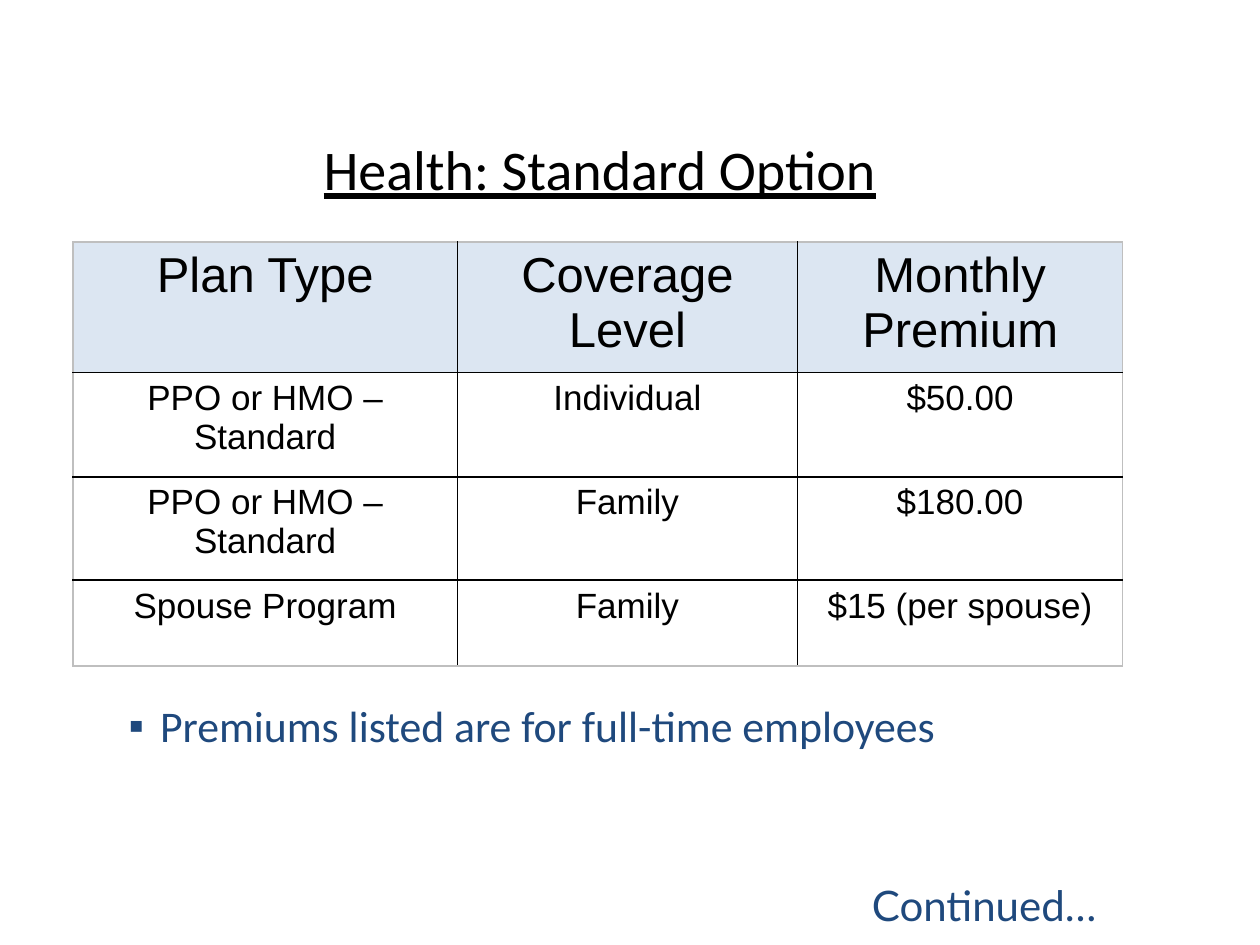
from dataclasses import dataclass

from lxml.etree import SubElement
from pptx import Presentation
from pptx.dml.color import RGBColor
from pptx.enum.text import MSO_ANCHOR, MSO_AUTO_SIZE, PP_ALIGN
from pptx.oxml.ns import qn
from pptx.util import Inches, Pt


@dataclass(frozen=True)
class Theme:
    ink: str = "000000"
    accent: str = "1F497D"
    header_fill: str = "DCE6F2"
    frame: str = "BFBFBF"
    title_size: int = 32
    header_size: int = 28
    cell_size: int = 20
    note_size: int = 25
    continued_size: int = 24


theme = Theme()


def style(paragraph, face, size, color, align):
    paragraph.font.name = face
    paragraph.font.size = Pt(size)
    paragraph.font.color.rgb = RGBColor.from_string(color)
    paragraph.alignment = align
    paragraph.space_before = Pt(0)


def add_border(cell, side, color, points):
    """Draw one side of a cell; call in the order L, R, T, B, before the fill."""
    line = SubElement(cell._tc.get_or_add_tcPr(), qn(f"a:ln{side}"), w=str(Pt(points)))
    fill = SubElement(line, qn("a:solidFill"))
    SubElement(fill, qn("a:srgbClr"), val=color)


deck = Presentation()
deck.slide_width, deck.slide_height = Inches(10), Inches(7.5)
page = deck.slides.add_slide(deck.slide_layouts[1])

# Title
title = page.shapes.title
title.left, title.top = Inches(0.3), Inches(0.92)
title.width, title.height = Inches(8.92), Inches(0.83)
title.text_frame.text = "Health: Standard Option"
title.text_frame.vertical_anchor = MSO_ANCHOR.MIDDLE
heading = title.text_frame.paragraphs[0]
style(heading, "Calibri", theme.title_size, theme.ink, PP_ALIGN.CENTER)
heading.font.underline = True

# Premium table
premiums = [
    ["Plan Type", "Coverage Level", "Monthly Premium"],
    ["PPO or HMO – Standard", "Individual", "$50.00"],
    ["PPO or HMO – Standard", "Family", "$180.00"],
    ["Spouse Program", "Family", "$15 (per spouse)"],
]
column_widths = [3.05, 2.7, 2.58]
row_heights = [0.97, 0.83, 0.82, 0.68]
table = page.shapes.add_table(
    len(row_heights), len(column_widths), Inches(0.58), Inches(1.92),
    Inches(sum(column_widths)), Inches(sum(row_heights))).table
table.first_row = table.horz_banding = False
for column, width in zip(table.columns, column_widths):
    column.width = Inches(width)
for row, height in zip(table.rows, row_heights):
    row.height = Inches(height)

last_row, last_column = len(row_heights) - 1, len(column_widths) - 1
for r, labels in enumerate(premiums):
    for c, label in enumerate(labels):
        cell = table.cell(r, c)
        cell.text = label
        size = theme.cell_size if r else theme.header_size
        style(cell.text_frame.paragraphs[0], "Arial", size, theme.ink, PP_ALIGN.CENTER)
        outer_sides = {"L": c == 0, "R": c == last_column, "T": r == 0, "B": r == last_row}
        for side, is_outer in outer_sides.items():
            add_border(cell, side, theme.frame if is_outer else theme.ink, 1)
        if r == 0:
            cell.fill.solid()
            cell.fill.fore_color.rgb = RGBColor.from_string(theme.header_fill)
        else:
            cell.fill.background()

# Note under the table
note = page.placeholders[1]
note.left, note.top = Inches(0.92), Inches(5.58)
note.width, note.height = Inches(8.33), Inches(0.45)
note.text_frame.text = "Premiums listed are for full-time employees"
note.text_frame.auto_size = MSO_AUTO_SIZE.SHAPE_TO_FIT_TEXT
para = note.text_frame.paragraphs[0]
properties = para._p.get_or_add_pPr()
properties.set("marL", str(Inches(0.25)))
properties.set("indent", str(Inches(-0.25)))
SubElement(properties, qn("a:buFont"), typeface="Arial")
SubElement(properties, qn("a:buChar"), char="▪")
style(para, "Calibri", theme.note_size, theme.accent, PP_ALIGN.LEFT)
para.line_spacing = 0.8

# Pointer to the next page
continued = page.shapes.add_textbox(Inches(6.13), Inches(6.93), Inches(2.67), Inches(0.5))
continued.text_frame.word_wrap = True
continued.text_frame.auto_size = MSO_AUTO_SIZE.SHAPE_TO_FIT_TEXT
continued.text_frame.text = "Continued…"
style(continued.text_frame.paragraphs[0], "Lato", theme.continued_size,
      theme.accent, PP_ALIGN.RIGHT)

deck.save("out.pptx")
